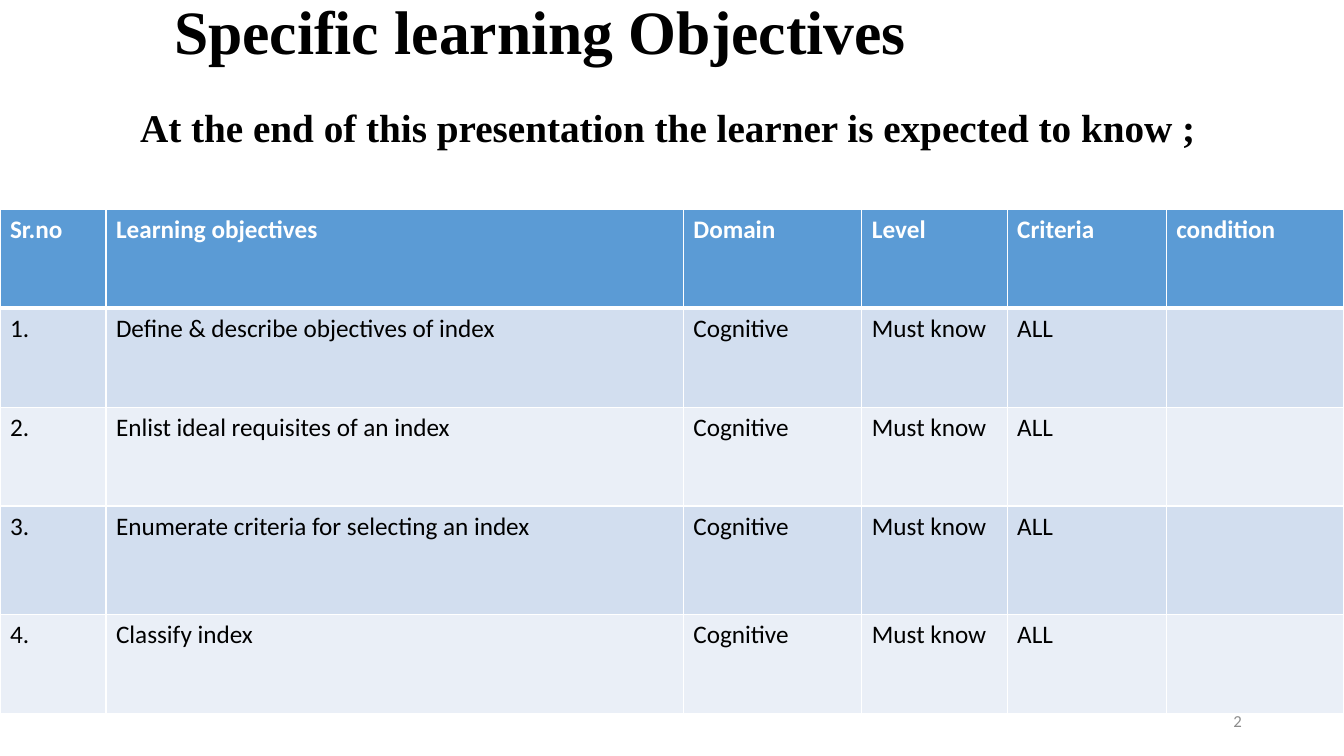
from lxml import etree
from pptx import Presentation
from pptx.dml.color import RGBColor
from pptx.enum import text
from pptx.oxml import ns
from pptx.util import Cm, Pt

COLORS = {
    "ink": "000000",
    "paper": "FFFFFF",
    "header": "5B9BD5",
    "odd": "D2DEEF",
    "even": "EAEFF7",
    "number": "8C8C8C",
}
SERIF, SANS = "Times New Roman", "Calibri"
LEFT, RIGHT = text.PP_ALIGN.LEFT, text.PP_ALIGN.RIGHT
TOP, MIDDLE = text.MSO_ANCHOR.TOP, text.MSO_ANCHOR.MIDDLE

TEXTS = [
    ("Specific learning Objectives", (4.14, -0.66, 25.73, 3.07),
     (SERIF, 44, True, "ink"), LEFT, MIDDLE, 0.9),
    ("At the end of this presentation the learner is expected to know ;", (3.28, 2.49, 27.2, 1.45),
     (SERIF, 28, True, "ink"), LEFT, TOP, 1.0),
    ("2", (23.93, 17.65, 7.62, 1.02),
     (SANS, 12, False, "number"), RIGHT, MIDDLE, 1.0),
]
HEADINGS = ["Sr.no", "Learning objectives", "Domain", "Level", "Criteria", "condition"]
OBJECTIVES = [
    "Define & describe objectives of index",
    "Enlist ideal requisites of an index",
    "Enumerate criteria for selecting an index",
    "Classify index",
]
COLUMN_WIDTHS = [2.67, 14.55, 4.5, 3.66, 4.01, 4.48]
ROW_HEIGHTS = [2.49, 2.49, 2.49, 2.74, 2.49]
TABLE_TOP = 5.28


def color(name):
    return RGBColor.from_string(COLORS[name])


def style(para, font_name, size, bold, color_name):
    font = para.font
    font.name, font.size, font.bold = font_name, Pt(size), bold
    font.color.rgb = color(color_name)


def add_text(page, words, place, look, align, anchor, spacing):
    box = page.shapes.add_textbox(*map(Cm, place))
    frame = box.text_frame
    frame.word_wrap = True
    frame.vertical_anchor = anchor
    para = frame.paragraphs[0]
    para.text = words
    para.alignment = align
    para.line_spacing = spacing
    style(para, *look)


def add_borders(cell, widths):
    properties = cell._tc.get_or_add_tcPr()
    for position, (side, width) in enumerate(widths.items()):
        line = etree.Element(ns.qn(f"a:ln{side}"), w=str(Pt(width)))
        fill = etree.SubElement(line, ns.qn("a:solidFill"))
        etree.SubElement(fill, ns.qn("a:srgbClr"), val=COLORS["paper"])
        properties.insert(position, line)


def add_objectives(page):
    rows = [HEADINGS] + [
        [f"{number}.", objective, "Cognitive", "Must know", "ALL", ""]
        for number, objective in enumerate(OBJECTIVES, 1)
    ]
    table = page.shapes.add_table(
        len(rows), len(HEADINGS), Cm(0), Cm(TABLE_TOP),
        Cm(sum(COLUMN_WIDTHS)), Cm(sum(ROW_HEIGHTS))).table
    for column, width in zip(table.columns, COLUMN_WIDTHS):
        column.width = Cm(width)
    for index, (row, height, words) in enumerate(zip(table.rows, ROW_HEIGHTS, rows)):
        row.height = Cm(height)
        heading = index == 0
        band = "header" if heading else "odd" if index % 2 else "even"
        borders = {"L": 1, "R": 1, "T": 3 if index == 1 else 1, "B": 3 if heading else 1}
        for cell, word in zip(row.cells, words):
            cell.text = word
            cell.fill.solid()
            cell.fill.fore_color.rgb = color(band)
            add_borders(cell, borders)
            style(cell.text_frame.paragraphs[0], SANS, 18, heading,
                  "paper" if heading else "ink")


def main():
    deck = Presentation()
    deck.slide_width, deck.slide_height = Cm(33.87), Cm(19.05)
    page = deck.slides.add_slide(deck.slide_layouts[6])
    for entry in TEXTS:
        add_text(page, *entry)
    add_objectives(page)
    deck.save("out.pptx")


if __name__ == "__main__":
    main()
